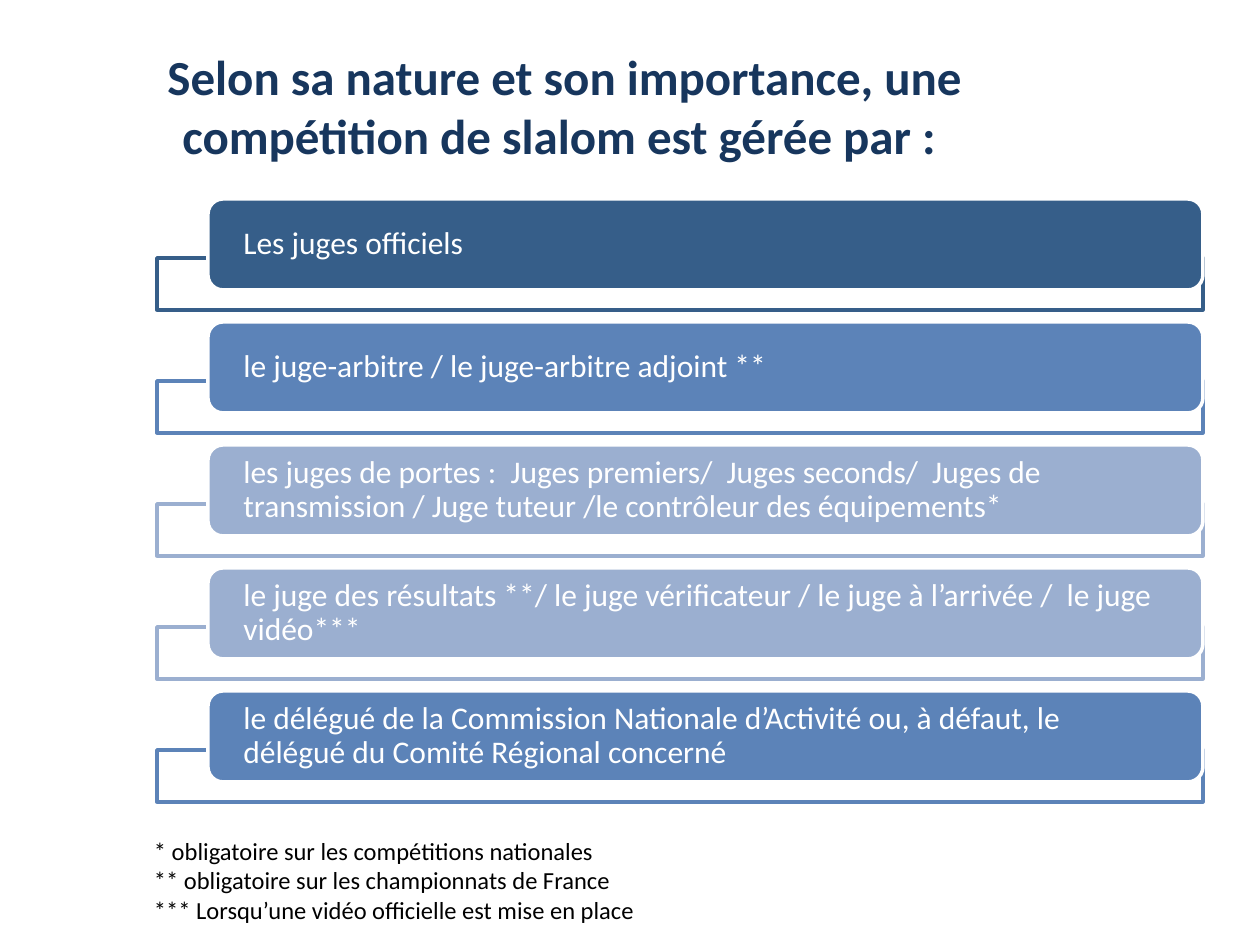
"""Build the slide listing who manages a slalom competition."""
from lxml import etree
from pptx import Presentation
from pptx.dml.color import RGBColor
from pptx.enum.shapes import MSO_SHAPE
from pptx.enum.text import MSO_ANCHOR, PP_ALIGN
from pptx.oxml.ns import qn
from pptx.util import Emu, Pt

RECTANGLE, ROUNDED = MSO_SHAPE.RECTANGLE, MSO_SHAPE.ROUNDED_RECTANGLE
TOP, MIDDLE = MSO_ANCHOR.TOP, MSO_ANCHOR.MIDDLE
LEFT, CENTER = PP_ALIGN.LEFT, PP_ALIGN.CENTER

WHITE = RGBColor(0xFF, 0xFF, 0xFF)
BLACK = RGBColor(0x00, 0x00, 0x00)
NAVY = RGBColor(0x17, 0x36, 0x5D)
DARK_BLUE = RGBColor(0x36, 0x5E, 0x89)
MID_BLUE = RGBColor(0x5C, 0x83, 0xB8)
PALE_BLUE = RGBColor(0x9B, 0xAF, 0xD0)

HEADING = "Selon sa nature et son importance, une compétition de slalom est gérée par : "
OFFICIALS = [
    ("Les juges officiels", DARK_BLUE),
    ("le juge-arbitre / le juge-arbitre adjoint **", MID_BLUE),
    ("les juges de portes :  Juges premiers/  Juges seconds/  Juges de transmission"
     " / Juge tuteur /le contrôleur des équipements*", PALE_BLUE),
    ("le juge des résultats **/ le juge vérificateur / le juge à l’arrivée /"
     "  le juge vidéo***", PALE_BLUE),
    ("le délégué de la Commission Nationale d’Activité ou, à défaut, le délégué"
     " du Comité Régional concerné", MID_BLUE),
]
FOOTNOTES = [
    "* obligatoire sur les compétitions nationales",
    "** obligatoire sur les championnats de France",
    "*** Lorsqu’une vidéo officielle est mise en place",
]

HEADING_FONT = {"name": "Calibri", "size": Pt(28), "bold": True}
BAR_FONT = {"name": "Calibri", "size": Pt(18)}
FOOTNOTE_FONT = {"name": "Calibri", "size": Pt(14)}

PX_PER_INCH = 126
SLIDE_SIZE = (1260, 945)
HEADING_BOX = (122, 40, 885, 131)
FOOTNOTE_BOX = (141, 830, 961, 102)
FRAME_BOX = (157, 258, 1046, 52)
BAR_BOX = (208, 199, 995, 91)
ROW_PITCH = 123
TEXT_MARGINS = (13, 6)
BAR_MARGINS = (31, 4)


def px(length):
    return Emu(round(length * 914400 / PX_PER_INCH))


def box_at(box, row=0):
    left, top, width, height = box
    return [px(part) for part in (left, top + row * ROW_PITCH, width, height)]


def write(frame, lines, font, color, margins, anchor=TOP, align=LEFT, spacing=1.0):
    side, edge = map(px, margins)
    layout = {"word_wrap": True, "vertical_anchor": anchor, "margin_left": side,
              "margin_right": side, "margin_top": edge, "margin_bottom": edge}
    for key, value in layout.items():
        setattr(frame, key, value)
    for index, line in enumerate(lines):
        paragraph = frame.add_paragraph() if index else frame.paragraphs[0]
        paragraph.alignment, paragraph.line_spacing = align, spacing
        run = paragraph.add_run()
        run.text = line
        for key, value in font.items():
            setattr(run.font, key, value)
        run.font.color.rgb = color


def add_panel(slide, preset, box, row, fill, outline):
    panel = slide.shapes.add_shape(preset, *box_at(box, row))
    panel.shadow.inherit = False
    panel.fill.solid()
    panel.fill.fore_color.rgb = fill
    panel.line.color.rgb = outline
    panel.line.width = Pt(2)
    return panel


def add_official(slide, row, label, color):
    frame = add_panel(slide, RECTANGLE, FRAME_BOX, row, WHITE, color)
    tint = frame.fill._xPr.find(qn("a:solidFill"))[0]
    etree.SubElement(tint, qn("a:alpha"), val="90000")
    bar = add_panel(slide, ROUNDED, BAR_BOX, row, color, WHITE)
    write(bar.text_frame, [label], BAR_FONT, WHITE, BAR_MARGINS, MIDDLE, spacing=0.9)


def main():
    deck = Presentation()
    deck.slide_width, deck.slide_height = map(px, SLIDE_SIZE)
    slide = deck.slides.add_slide(deck.slide_layouts[6])
    for row, (label, color) in enumerate(OFFICIALS):
        add_official(slide, row, label, color)
    heading = slide.shapes.add_textbox(*box_at(HEADING_BOX))
    write(heading.text_frame, [HEADING], HEADING_FONT, NAVY, TEXT_MARGINS, MIDDLE, CENTER)
    footnotes = slide.shapes.add_textbox(*box_at(FOOTNOTE_BOX))
    write(footnotes.text_frame, FOOTNOTES, FOOTNOTE_FONT, BLACK, TEXT_MARGINS)
    deck.save("out.pptx")


if __name__ == "__main__":
    main()
